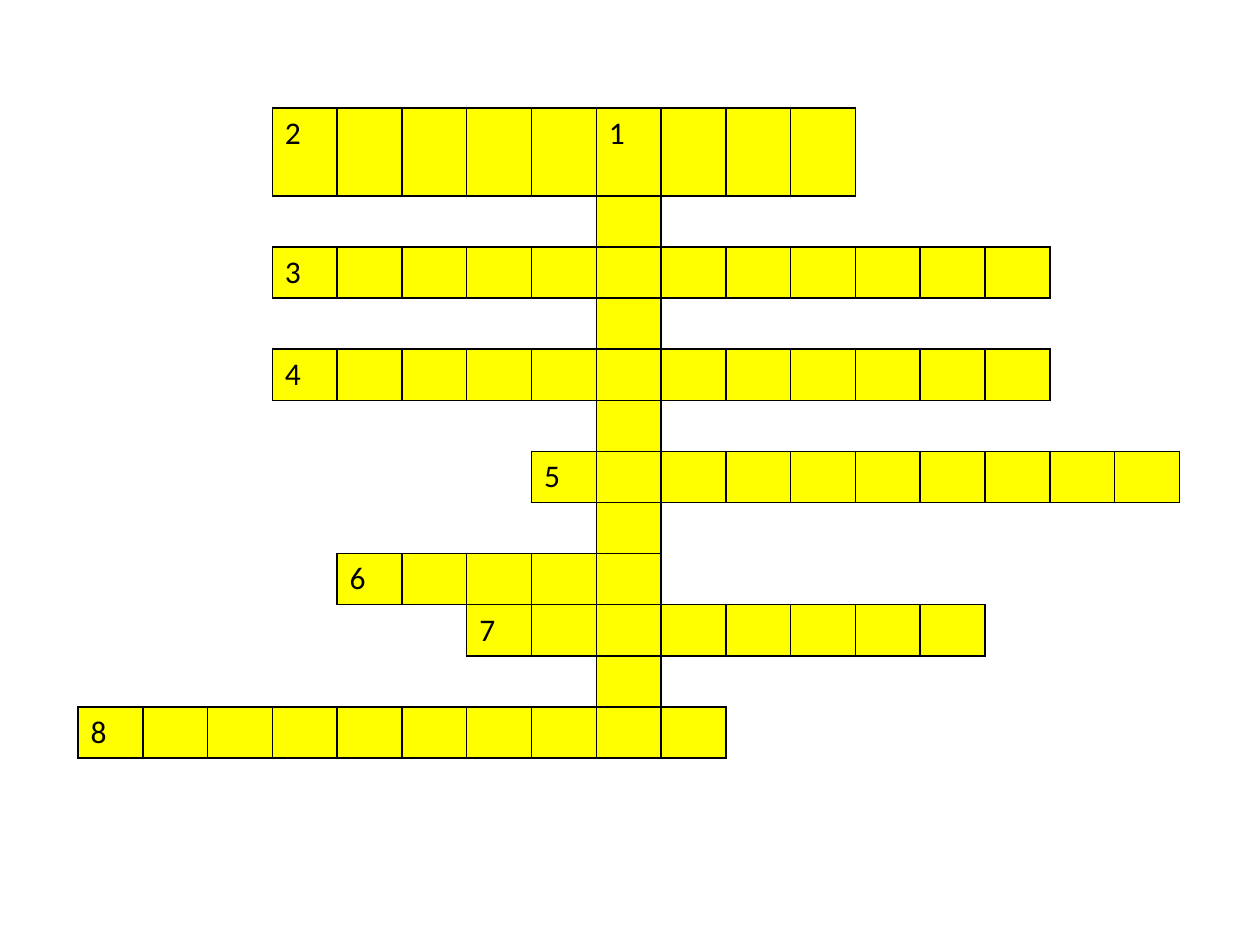
from pptx import Presentation
from pptx.dml.color import RGBColor as Rgb
from pptx.oxml.ns import qn
from pptx.util import Emu, Pt
from lxml.etree import SubElement as Sub

EMU_PER_PX = 914400 // 126
COLORS = {"square": "FFFF00", "ink": "000000"}
NO_GRID_STYLE = "{2D5ABB26-0587-4C30-8999-92F81FD0307C}"
ROWS, COLS = 12, 17
GRID_LEFT, GRID_TOP, GRID_WIDTH = 78, 108, 1102
FIRST_ROW, OTHER_ROW = 88, 51
DOWN_CLUE, DOWN_COL = "1", 8
ACROSS = [
    ("2", 0, 3, 9),
    ("3", 2, 3, 12),
    ("4", 4, 3, 12),
    ("5", 6, 7, 10),
    ("6", 8, 4, 5),
    ("7", 9, 6, 8),
    ("8", 11, 0, 10),
]
SIDES = {"a:lnL": (0, -1), "a:lnR": (0, 1), "a:lnT": (-1, 0), "a:lnB": (1, 0)}


def px(length):
    """Turn pixels into EMU."""
    return Emu(length * EMU_PER_PX)


def crossword_squares():
    """Return the positions of all squares that take a letter."""
    down = {(row, DOWN_COL) for row in range(ROWS)}
    across = {(row, start + step) for _, row, start, length in ACROSS for step in range(length)}
    return down | across


def clue_numbers():
    """Map the first square of each word to its number."""
    numbers = {(row, start): number for number, row, start, _ in ACROSS}
    return numbers | {(0, DOWN_COL): DOWN_CLUE}


def add_border(cell, side, visible):
    """Give one side of a cell a thin line or none."""
    border = Sub(cell._tc.get_or_add_tcPr(), qn(side), w=str(Pt(1)))
    if visible:
        ink = Sub(border, qn("a:solidFill"))
        Sub(ink, qn("a:srgbClr"), val=COLORS["ink"])
    else:
        Sub(border, qn("a:noFill"))


def style_cell(cell, position, squares):
    """Outline a cell wherever it is or touches a square, and fill squares."""
    row, col = position
    for side, (down, right) in SIDES.items():
        neighbour = (row + down, col + right)
        add_border(cell, side, position in squares or neighbour in squares)
    if position in squares:
        cell.fill.solid()
        cell.fill.fore_color.rgb = Rgb.from_string(COLORS["square"])
    else:
        cell.fill.background()


def write_number(cell, number):
    """Write the number of a clue in its square."""
    run = cell.text_frame.paragraphs[0].add_run()
    run.text = number
    run.font.name = "Calibri"
    run.font.size = Pt(18)
    run.font.color.rgb = Rgb.from_string(COLORS["ink"])


def add_grid(slide):
    """Add the bare table that holds the crossword."""
    height = FIRST_ROW + (ROWS - 1) * OTHER_ROW
    grid = slide.shapes.add_table(
        ROWS, COLS, px(GRID_LEFT), px(GRID_TOP), px(GRID_WIDTH), px(height)
    ).table
    grid.first_row = grid.horz_banding = False
    grid._tbl.tblPr.find(qn("a:tableStyleId")).text = NO_GRID_STYLE
    for index, row in enumerate(grid.rows):
        row.height = px(OTHER_ROW if index else FIRST_ROW)
    return grid


def main():
    """Build the crossword slide."""
    deck = Presentation()
    deck.slide_width, deck.slide_height = px(1260), px(945)
    slide = deck.slides.add_slide(deck.slide_layouts[6])
    grid = add_grid(slide)
    squares = crossword_squares()
    for row in range(ROWS):
        for col in range(COLS):
            style_cell(grid.cell(row, col), (row, col), squares)
    for position, number in clue_numbers().items():
        write_number(grid.cell(*position), number)
    deck.save("out.pptx")


if __name__ == "__main__":
    main()
